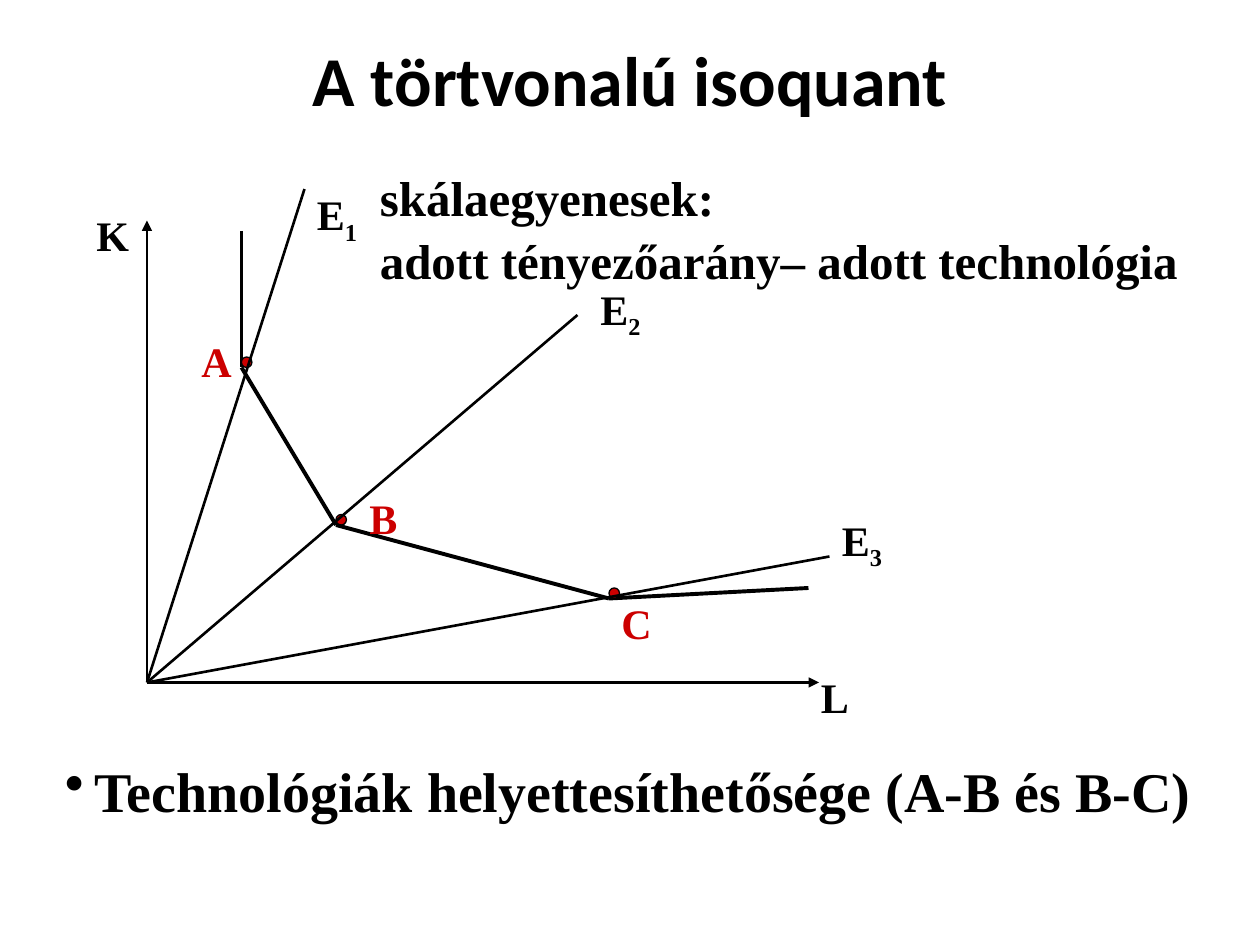
from lxml import etree
from pptx import Presentation
from pptx.dml.color import RGBColor
from pptx.enum.shapes import MSO_CONNECTOR, MSO_SHAPE
from pptx.enum.text import MSO_ANCHOR, PP_ALIGN
from pptx.oxml.ns import qn
from pptx.util import Pt

BLACK = RGBColor(0x00, 0x00, 0x00)
RED = RGBColor(0xCC, 0x00, 0x00)
SERIF = "Times New Roman"


def add_run(p, text, size=24, color=BLACK, font=SERIF, baseline=None):
    r = p.add_run()
    r.text = text
    f = r.font
    f.size, f.bold, f.name = Pt(size), True, font
    f.color.rgb = color
    if baseline:
        r._r.get_or_add_rPr().set("baseline", str(baseline))


def add_text(s, box, text, sub=None, bullet_indent=None, **fmt):
    tf = s.shapes.add_textbox(*map(Pt, box)).text_frame
    tf.word_wrap = True
    p = tf.paragraphs[0]
    p.line_spacing = 1.07
    if bullet_indent:
        pPr = p._p.get_or_add_pPr()
        pPr.set("marL", str(Pt(bullet_indent)))
        pPr.set("indent", str(-Pt(bullet_indent)))
        etree.SubElement(pPr, qn("a:buChar")).set("char", "•")
    for i, line in enumerate(text.split("\n")):
        if i:
            p.add_line_break()
        add_run(p, line, **fmt)
    if sub:
        add_run(p, sub, baseline=-25000, **fmt)


def add_line(s, start, end, width=1.5, arrow=False):
    c = s.shapes.add_connector(MSO_CONNECTOR.STRAIGHT, *map(Pt, start + end))
    c.line.width = Pt(width)
    c.line.color.rgb = BLACK
    if arrow:
        etree.SubElement(c.line._get_or_add_ln(), qn("a:tailEnd")).set("type", "triangle")
    etree.SubElement(c._element.spPr, qn("a:effectLst"))


def add_dot(s, x, y, d=6):
    dot = s.shapes.add_shape(MSO_SHAPE.OVAL, Pt(x), Pt(y), Pt(d), Pt(d))
    dot.shadow.inherit = False
    dot.fill.solid()
    dot.fill.fore_color.rgb = RED
    dot.line.color.rgb = BLACK
    dot.line.width = Pt(0.75)


def add_title(s, box, text):
    title = s.shapes.title
    title.left, title.top, title.width, title.height = map(Pt, box)
    tf = title.text_frame
    tf.vertical_anchor = MSO_ANCHOR.MIDDLE
    p = tf.paragraphs[0]
    p.alignment = PP_ALIGN.CENTER
    add_run(p, text, size=40, font="Calibri")


def add_diagram(s, box):
    left, top, width, height = box

    def at(x, y):
        return left + x, top + y

    origin = at(0, height)

    # Axes
    for end in (at(0, 18), at(width, height)):
        add_line(s, origin, end, arrow=True)

    # Isoquant with its corner points
    corners = [at(54, 102), at(108, 192), at(264, 234)]
    isoquant = [at(54, 24), *corners, at(378, 228)]
    for start, end in zip(isoquant, isoquant[1:]):
        add_line(s, start, end, width=2.25)
    for x, y in corners:
        add_dot(s, x, y - 6)

    # Scale lines
    for end in (at(90, 0), at(246, 72), at(390, 210)):
        add_line(s, origin, end)

    # Labels: text, subscript, offset, width, colour
    labels = [
        ("K", None, (-36, 6), 48, BLACK),
        ("L", None, (378, 270), 48, BLACK),
        ("A", None, (24, 78), 42, RED),
        ("B", None, (120, 168), 48, RED),
        ("C", None, (264, 228), 30, RED),
        ("E", "1", (90, -6), 42, BLACK),
        ("E", "2", (252, 48), 48, BLACK),
        ("E", "3", (390, 180), 42, BLACK),
    ]
    for text, sub, offset, w, color in labels:
        add_text(s, (*at(*offset), w, 36), text, sub=sub, color=color)


def main():
    prs = Presentation()
    prs.slide_width, prs.slide_height = Pt(720), Pt(540)
    s = prs.slides.add_slide(prs.slide_layouts[5])
    add_title(s, (54, 0, 612, 90), "A törtvonalú isoquant")
    add_diagram(s, (84, 108, 384, 282))
    # Explanation of the scale lines
    add_text(s, (210, 90, 510, 74),
             "skálaegyenesek:\nadott tényezőarány– adott technológia", size=28)
    # Conclusion
    add_text(s, (30, 426, 666, 45), "Technológiák helyettesíthetősége (A-B és B-C)",
             size=32, bullet_indent=17)
    prs.save("out.pptx")


if __name__ == "__main__":
    main()
